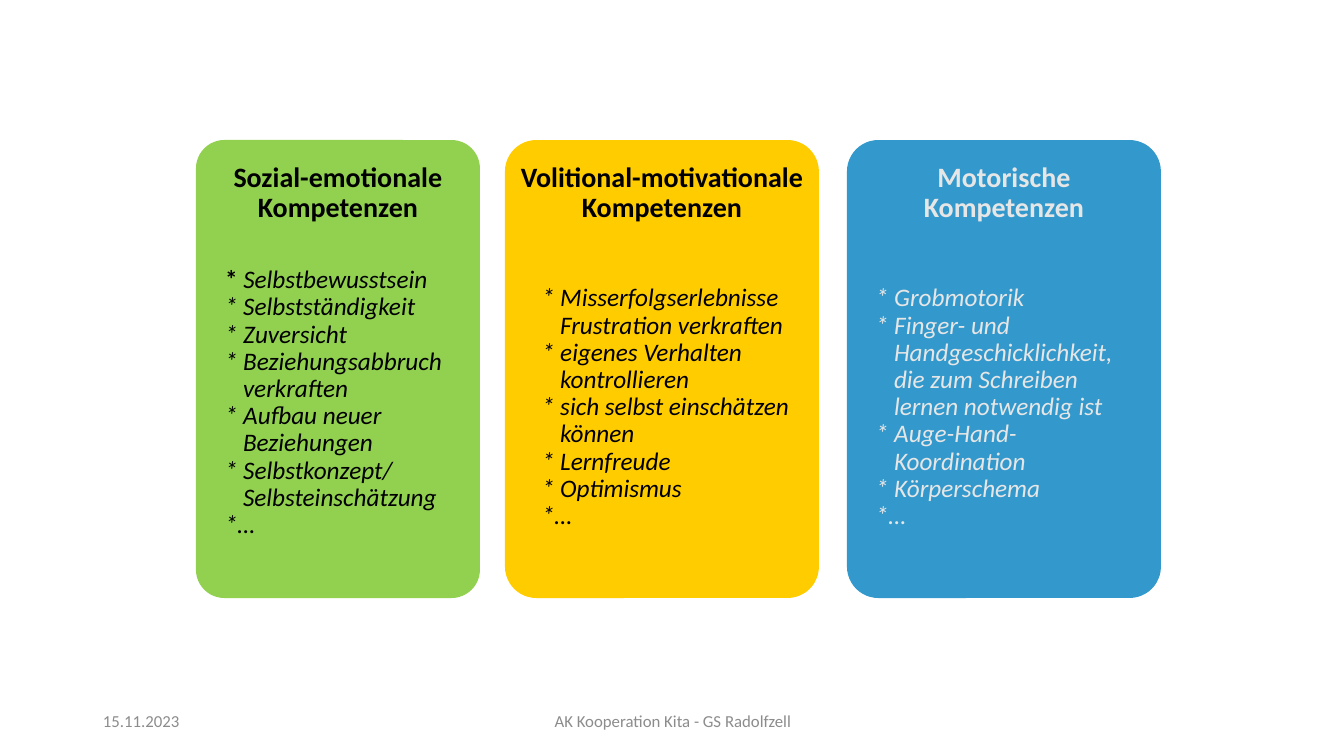
from pptx import Presentation
from pptx.dml.color import RGBColor
from pptx.enum.shapes import MSO_SHAPE
from pptx.enum.text import MSO_ANCHOR, PP_ALIGN

PX = 914400 / 100.8
COLORS = {"green": "92D050", "yellow": "FFCC00", "blue": "3399CC",
          "black": "000000", "light": "E7E6E6", "gray": "8C8C8C"}


def px(*lengths):
    return [round(n * PX) for n in lengths]


def add_text(s, box, paragraphs, color, font, para, insets):
    tf = s.shapes.add_textbox(*px(*box)).text_frame
    tf.word_wrap = True
    tf.vertical_anchor = MSO_ANCHOR.MIDDLE
    tf.margin_left, tf.margin_top, tf.margin_right, tf.margin_bottom = px(*insets)
    for i, text in enumerate(paragraphs):
        p = tf.paragraphs[0] if i == 0 else tf.add_paragraph()
        p.text = text
        for name, value in para.items():
            setattr(p, name, value)
        for r in p.runs:
            r.font.name = "Calibri"
            r.font.color.rgb = RGBColor.from_string(COLORS[color])
            for name, value in font.items():
                setattr(r.font, name, value)
    return tf


HEADING = {"size": 254000, "bold": True}
ITEM = {"size": 228600, "italic": True}
FOOTER = {"size": 152400}
CENTERED = {"alignment": PP_ALIGN.CENTER}
TIGHT = {"line_spacing": 0.9}

cards = [
    (196, 284, "green", "black", "Sozial-emotionale\nKompetenzen", (220, 278, 241, 250),
     ["Selbstbewusstsein", "* Selbstständigkeit", "* Zuversicht",
      "* Beziehungsabbruch verkraften", "* Aufbau neuer Beziehungen",
      "* Selbstkonzept/ Selbsteinschätzung", "*…"]),
    (505, 314, "yellow", "black", "Volitional-motivationale\nKompetenzen", (537, 267, 266, 281),
     ["* Misserfolgserlebnisse\nFrustration verkraften", "* eigenes Verhalten kontrollieren",
      "* sich selbst einschätzen können", "* Lernfreude", "* Optimismus", "*…"]),
    (847, 314, "blue", "light", "Motorische\nKompetenzen", (871, 267, 266, 281),
     ["* Grobmotorik", "* Finger- und Handgeschicklichkeit,\ndie zum Schreiben lernen notwendig ist",
      "* Auge-Hand-Koordination", "* Körperschema", "*…"]),
]

prs = Presentation()
prs.slide_width, prs.slide_height = px(1344, 756)
s = prs.slides.add_slide(prs.slide_layouts[6])

for left, width, fill, color, heading, box, items in cards:
    sp = s.shapes.add_shape(MSO_SHAPE.ROUNDED_RECTANGLE, *px(left, 140, width, 458))
    sp.adjustments[0] = 0.1
    sp.shadow.inherit = False
    sp.fill.solid()
    sp.fill.fore_color.rgb = RGBColor.from_string(COLORS[fill])
    sp.line.fill.background()
    add_text(s, (left, 140, width, 107), [heading], color, HEADING, {**CENTERED, **TIGHT}, (8, 8, 8, 8))
    if fill == "green":
        items[0] = "* " + items[0]
    tf = add_text(s, box, items, color, ITEM, TIGHT, (5, 4, 5, 4))
    for p in tf.paragraphs:
        pPr = p._p.get_or_add_pPr()
        pPr.set("marL", str(px(18)[0]))
        pPr.set("indent", str(px(-18)[0]))
    if fill == "green":
        p = tf.paragraphs[0]
        star, r = p.runs[0], p.add_run()
        star.text, r.text = "* ", items[0][2:]
        r.font.color.rgb = RGBColor.from_string(COLORS[color])
        for name, value in {"name": "Calibri", **ITEM}.items():
            setattr(r.font, name, value)
        star.font.bold, star.font.italic = True, False

for box, text, para in [((93, 701, 302, 40), "15.11.2023", {}),
                        ((446, 701, 454, 40), "AK Kooperation Kita - GS Radolfzell", CENTERED)]:
    add_text(s, box, [text], "gray", FOOTER, para, (10, 5, 10, 5))

prs.save("out.pptx")
